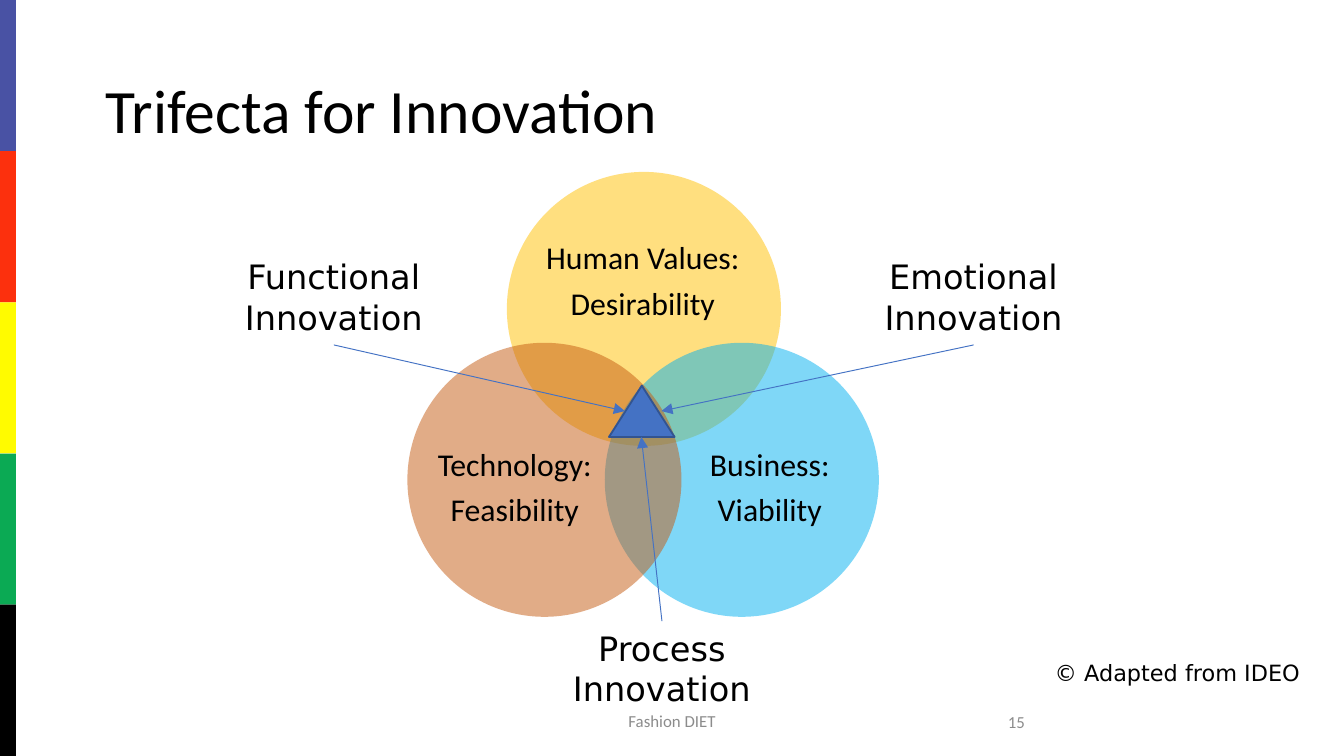
import pptx
import pptx.dml.color
import pptx.enum.shapes
import pptx.enum.text
import pptx.oxml.ns
import pptx.util
from lxml import etree

Cm, Pt = pptx.util.Cm, pptx.util.Pt
RGB = pptx.dml.color.RGBColor.from_string
MSO = pptx.enum.shapes.MSO_SHAPE
PP = pptx.enum.text.PP_ALIGN
MIDDLE = pptx.enum.text.MSO_ANCHOR.MIDDLE
TOP = pptx.enum.text.MSO_ANCHOR.TOP
qn = pptx.oxml.ns.qn

COLORS = {
    "text": "000000", "footer": "8C8C8C",
    "human": "FFC000", "business": "00B0F0", "technology": "C55A11",
    "core": "4472C4", "core_line": "325491",
}
STRIPES = ["4952A4", "FC300D", "FFFB00", "0BAA54", "000000"]

prs = pptx.Presentation()
prs.slide_width, prs.slide_height = Cm(25.4), Cm(14.29)
s = prs.slides.add_slide(prs.slide_layouts[6])


def add_shape(kind, x, y, w, h, color):
    sp = s.shapes.add_shape(kind, Cm(x), Cm(y), Cm(w), Cm(h))
    sp.shadow.inherit = False
    sp.fill.solid()
    sp.fill.fore_color.rgb = RGB(color)
    sp.line.fill.background()
    return sp


def add_text(x, y, w, h, lines, size, font="Calibri", align=PP.CENTER,
             anchor=MIDDLE, color="text", spacing=None, after=None, inset=True):
    sp = s.shapes.add_textbox(Cm(x), Cm(y), Cm(w), Cm(h))
    tf = sp.text_frame
    tf.word_wrap = True
    tf.vertical_anchor = anchor
    if not inset:
        tf.margin_left = tf.margin_right = tf.margin_top = tf.margin_bottom = 0
    for i, line in enumerate(lines):
        p = tf.paragraphs[0] if i == 0 else tf.add_paragraph()
        p.text = line
        p.alignment = align
        p.line_spacing = spacing
        p.space_after = after
        p.font.size = Pt(size)
        p.font.name = font
        p.font.color.rgb = RGB(COLORS[color])
    return sp


# Colour stripes down the left edge
stripe_h = 14.29 / len(STRIPES)
for i, color in enumerate(STRIPES):
    add_shape(MSO.RECTANGLE, 0, i * stripe_h, 0.3, stripe_h, color)

# Title and footer
add_text(1.75, 0.76, 21.9, 2.76, ["Trifecta for Innovation"], 33,
         align=PP.LEFT, spacing=0.9)
add_text(8.41, 13.24, 8.58, 0.76, ["Fashion DIET"], 9, color="footer")
add_text(13.9, 13.26, 5.72, 0.76, ["15"], 9, align=PP.RIGHT, color="footer")

# Overlapping circles: colour, circle position, text box, lines
circles = [
    ("human", 9.58, 3.25, (10.26, 4.17, 3.78, 2.34), ["Human Values:", "Desirability"]),
    ("business", 11.43, 6.48, (13, 7.82, 3.1, 2.84), ["Business:", "Viability"]),
    ("technology", 7.7, 6.48, (8.18, 7.82, 3.1, 2.84), ["Technology:", "Feasibility"]),
]
for name, x, y, box, lines in circles:
    sp = add_shape(MSO.OVAL, x, y, 5.18, 5.18, COLORS[name])
    clr = sp.fill._xPr.find(qn("a:solidFill"))[0]
    etree.SubElement(clr, qn("a:alpha"), val="50000")
    add_text(*box, lines, 17, spacing=0.9, after=Pt(6), inset=False)

# Triangle where the circles meet
core = add_shape(MSO.ISOSCELES_TRIANGLE, 11.51, 7.29, 1.24, 0.97, COLORS["core"])
core.line.color.rgb = RGB(COLORS["core_line"])
core.line.width = Pt(1)

# Innovation labels, each with an arrow: lines, position, side, arrow tip
labels = [
    (["Emotional Innovation"], 15.8, 4.72, 2, (12.5, 7.77)),
    (["Functional", "Innovation"], 3.71, 4.72, 2, (11.81, 7.77)),
    (["Process", "Innovation"], 9.91, 11.74, 0, (12.12, 8.26)),
]
for lines, x, y, side, (tip_x, tip_y) in labels:
    label = add_text(x, y, 5.2, 1.8, lines, 18, "DejaVu Sans", anchor=TOP)
    arrow = s.shapes.add_connector(pptx.enum.shapes.MSO_CONNECTOR.STRAIGHT,
                                   Cm(x), Cm(y), Cm(tip_x), Cm(tip_y))
    arrow.begin_connect(label, side)
    arrow.line.color.rgb = RGB(COLORS["core"])
    arrow.line.width = Pt(0.5)
    etree.SubElement(arrow.line._get_or_add_ln(), qn("a:tailEnd"), type="triangle")
    etree.SubElement(arrow._element.spPr, qn("a:effectLst"))

# Credit
add_text(19.5, 12.34, 5.32, 0.77, ["© Adapted from IDEO"], 12, "DejaVu Sans",
         align=PP.RIGHT, anchor=TOP)

prs.save("out.pptx")
